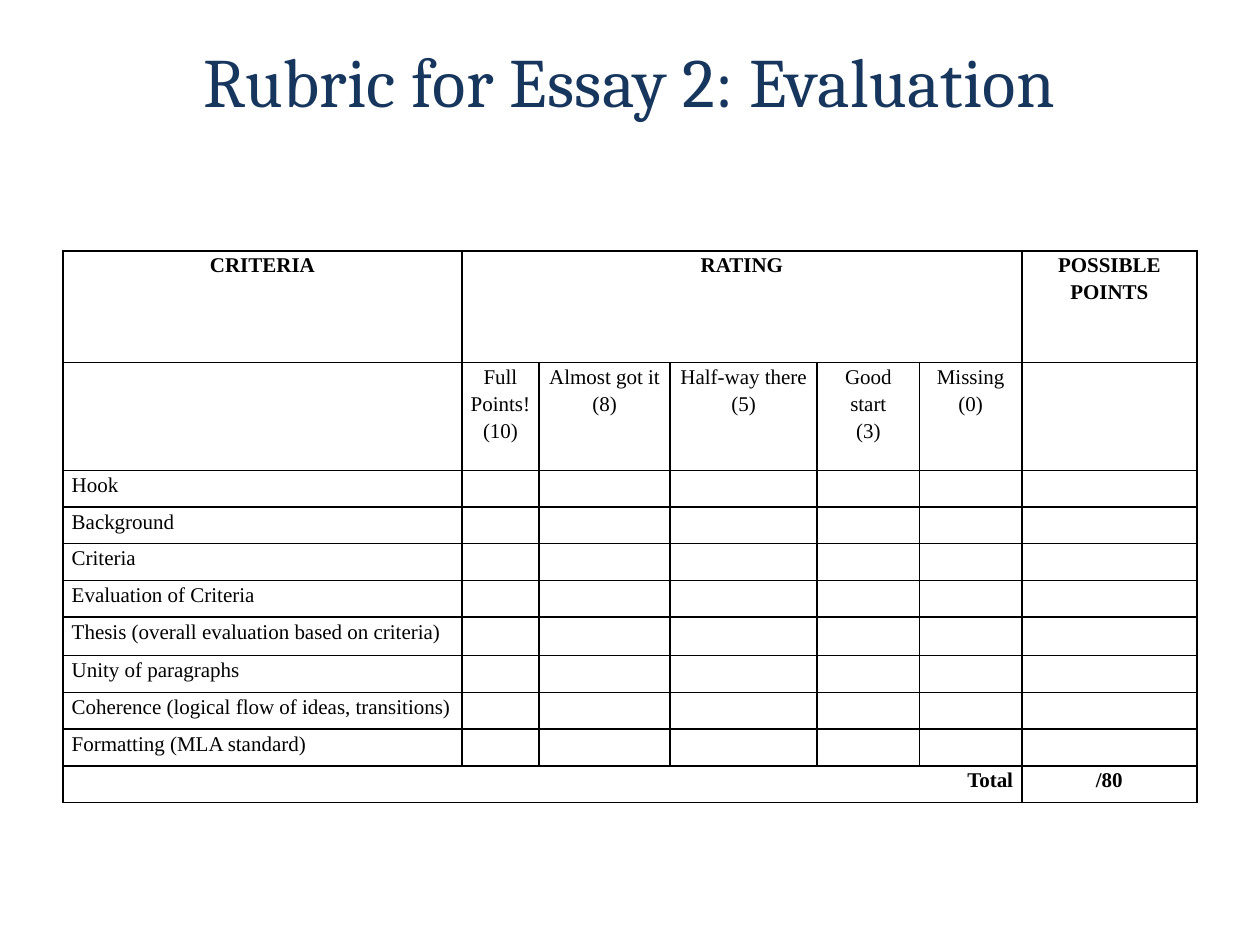
from dataclasses import dataclass

from lxml import etree
from pptx import Presentation
from pptx.dml.color import RGBColor
from pptx.enum import text
from pptx.oxml import ns
from pptx.util import Pt


@dataclass(frozen=True)
class Theme:
    navy: RGBColor = RGBColor(0x17, 0x36, 0x5D)
    black: RGBColor = RGBColor(0, 0, 0)
    title_font: str = "Cambria"
    body_font: str = "Times New Roman"
    title_size: float = 39.6
    body_size: float = 12


theme = Theme()
LEFT, CENTER, RIGHT = (text.PP_ALIGN.LEFT, text.PP_ALIGN.CENTER,
                       text.PP_ALIGN.RIGHT)


def style(p, font, size, color, align, bold=False):
    p.alignment = align
    p.font.name = font
    p.font.size = Pt(size)
    p.font.color.rgb = color
    p.font.bold = bold


def add_borders(cell, color, width=1):
    tc_pr = cell._tc.get_or_add_tcPr()
    for side in ("lnL", "lnR", "lnT", "lnB"):
        ln = etree.SubElement(tc_pr, ns.qn(f"a:{side}"), w=str(Pt(width)))
        fill = etree.SubElement(ln, ns.qn("a:solidFill"))
        etree.SubElement(fill, ns.qn("a:srgbClr"), val=str(color))


prs = Presentation()
prs.slide_width, prs.slide_height = Pt(720), Pt(540)
s = prs.slides.add_slide(prs.slide_layouts[6])

# Title
sp = s.shapes.add_textbox(Pt(36), Pt(21.6), Pt(648), Pt(90))
tf = sp.text_frame
tf.word_wrap = True
tf.margin_top = tf.margin_bottom = 0
p = tf.paragraphs[0]
r = p.add_run()
r.text = "Rubric for Essay 2: Evaluation"
r._r.get_or_add_rPr().set("spc", "20")
style(p, theme.title_font, theme.title_size, theme.navy, CENTER)

# Rubric content: two header rows, criteria, total
criteria = [
    "Hook", "Background", "Criteria", "Evaluation of Criteria",
    "Thesis (overall evaluation based on criteria)", "Unity of paragraphs",
    "Coherence (logical flow of ideas, transitions)",
    "Formatting (MLA standard)",
]
rows = [
    ["CRITERIA", "RATING", "", "", "", "", "POSSIBLE POINTS"],
    ["", "Full Points!\n(10)", "Almost got it\n(8)", "Half-way there\n(5)",
     "Good start\n(3)", "Missing\n(0)", ""],
    *[[name] + [""] * 6 for name in criteria],
    ["Total", "", "", "", "", "", "/80"],
]
widths = [228, 44, 75, 84, 58.5, 58.5, 100]
heights = [64, 61.5] + [21] * 9
heights[6] = 22
last = len(rows) - 1

# Table grid
table = s.shapes.add_table(len(rows), len(widths), Pt(36), Pt(143.3),
                           Pt(sum(widths)), Pt(sum(heights))).table
table.first_row = table.horz_banding = False
for column, width in zip(table.columns, widths):
    column.width = Pt(width)
for row, height in zip(table.rows, heights):
    row.height = Pt(height)
table.cell(0, 1).merge(table.cell(0, 5))
table.cell(last, 0).merge(table.cell(last, 5))

# Cell text and look
for i, row in enumerate(rows):
    for j, content in enumerate(row):
        cell = table.cell(i, j)
        add_borders(cell, theme.black)
        cell.fill.background()
        cell.margin_left = cell.margin_right = Pt(5)
        cell.margin_top = cell.margin_bottom = 0
        cell.text_frame.text = content
        if j == 0 and i > 1:
            align = RIGHT if i == last else LEFT
        else:
            align = CENTER
        for p in cell.text_frame.paragraphs:
            style(p, theme.body_font, theme.body_size, theme.black, align,
                  bold=i in (0, last))
            p.line_spacing = 1.15

prs.save("out.pptx")
